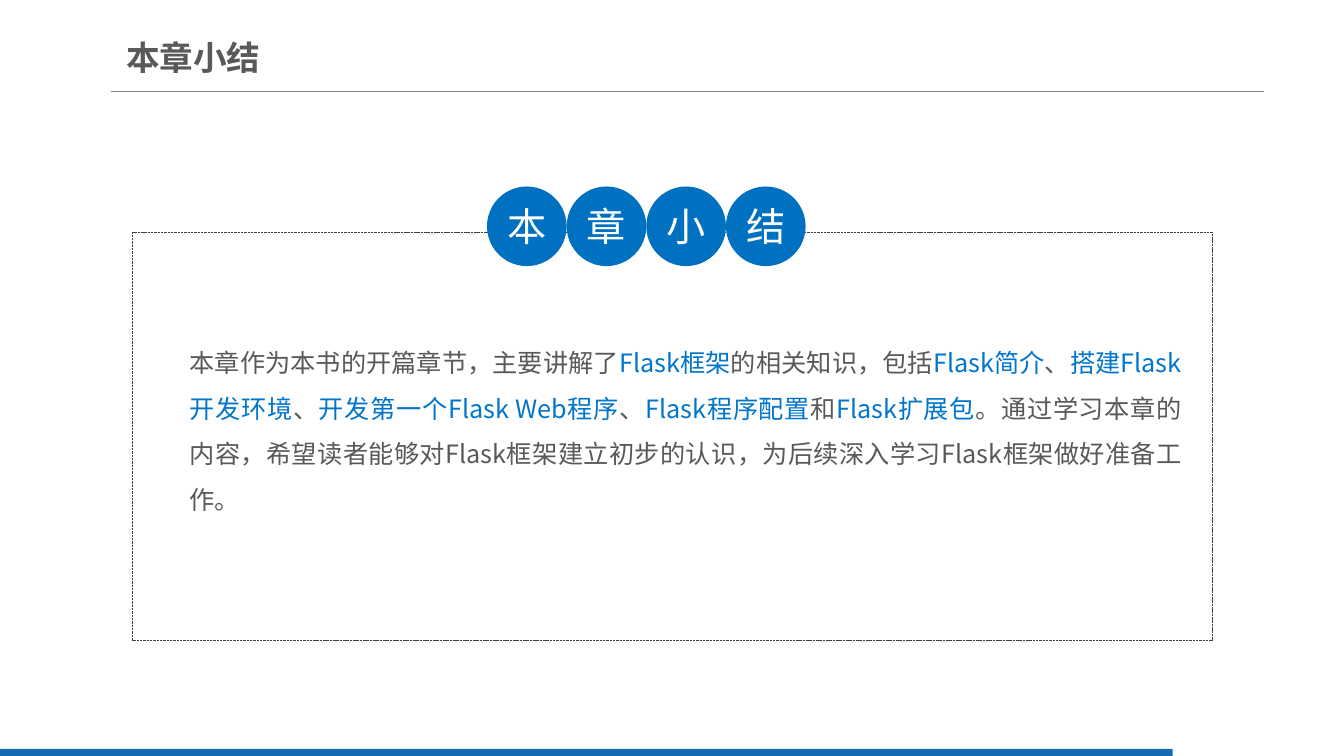
import pptx
import pptx.dml.color
import pptx.enum.dml
import pptx.enum.shapes
import pptx.enum.text
import pptx.oxml
import pptx.oxml.ns
import pptx.util

RGBColor = pptx.dml.color.RGBColor
Shape = pptx.enum.shapes.MSO_SHAPE
Align = pptx.enum.text.PP_ALIGN
Anchor = pptx.enum.text.MSO_ANCHOR

EMU_PER_PX = 9144  # 100 px to the inch
FONT = "Noto Sans CJK SC"
GRAY = RGBColor(0x59, 0x59, 0x59)
RULE_GRAY = RGBColor(0x80, 0x80, 0x80)
FRAME_GRAY = RGBColor(0x40, 0x40, 0x40)
BAR_BLUE = RGBColor(0x13, 0x69, 0xB2)
BADGE_BLUE = RGBColor(0x00, 0x70, 0xC0)
KEYWORD_BLUE = RGBColor(0x00, 0x75, 0xCC)
WHITE = RGBColor(0xFF, 0xFF, 0xFF)

HEADING = "本章小结"
# Plain text and highlighted keywords alternate.
SUMMARY = [
    "本章作为本书的开篇章节，主要讲解了", "Flask框架",
    "的相关知识，包括", "Flask简介",
    "、", "搭建Flask开发环境",
    "、", "开发第一个Flask Web程序",
    "、", "Flask程序配置",
    "和", "Flask扩展包",
    "。通过学习本章的内容，希望读者能够对Flask框架建立初步的认识，"
    "为后续深入学习Flask框架做好准备工作。",
]


def px(*lengths):
    return [pptx.util.Emu(length * EMU_PER_PX) for length in lengths]


def write_text(shape, spans, *, size, bold=False, align=Align.LEFT,
               anchor=Anchor.TOP, line_spacing=None, margins=(0, 0, 0, 0)):
    """Fill the shape with one paragraph of (text, colour) spans."""
    frame = shape.text_frame
    frame.word_wrap = True
    frame.auto_size = pptx.enum.text.MSO_AUTO_SIZE.NONE
    frame.vertical_anchor = anchor
    (frame.margin_left, frame.margin_top,
     frame.margin_right, frame.margin_bottom) = px(*margins)
    para = frame.paragraphs[0]
    para.alignment = align
    if line_spacing:
        para.line_spacing = line_spacing
    for text, color in spans:
        span = para.add_run()
        span.text = text
        span.font.size = pptx.util.Pt(size)
        span.font.bold = bold
        span.font.color.rgb = color
        span.font.name = FONT
        east_asian = pptx.oxml.parse_xml(
            f'<a:ea {pptx.oxml.ns.nsdecls("a")} typeface="{FONT}"/>')
        span.font._element.append(east_asian)


def add_filled(page, kind, box, color):
    shape = page.shapes.add_shape(kind, *px(*box))
    shape.shadow.inherit = False
    shape.fill.solid()
    shape.fill.fore_color.rgb = color
    shape.line.fill.background()
    return shape


def add_dashed_frame(page, box):
    frame = page.shapes.add_shape(Shape.ROUNDED_RECTANGLE, *px(*box))
    frame.adjustments[0] = 0
    frame.shadow.inherit = False
    frame.fill.background()
    frame.line.color.rgb = FRAME_GRAY
    frame.line.width = pptx.util.Pt(0.25)
    frame.line.dash_style = pptx.enum.dml.MSO_LINE.SQUARE_DOT


def add_rule(page, start, end):
    rule = page.shapes.add_connector(
        pptx.enum.shapes.MSO_CONNECTOR.STRAIGHT, *px(*start, *end))
    rule.line.color.rgb = RULE_GRAY
    rule.line.width = pptx.util.Pt(0.75)
    rule._element.spPr.append(pptx.oxml.parse_xml(
        f'<a:effectLst {pptx.oxml.ns.nsdecls("a")}/>'))


def place_title(page, box):
    title = page.shapes.title
    title.left, title.top, title.width, title.height = px(*box)
    write_text(title, [(HEADING, GRAY)], size=24, bold=True,
               anchor=Anchor.MIDDLE, margins=(0, 7, 0, 7))


def add_badges(page, left, top, diameter):
    """Place one circle per heading character, side by side."""
    for index, character in enumerate(HEADING):
        box = (left + index * diameter, top, diameter, diameter)
        badge = add_filled(page, Shape.OVAL, box, BADGE_BLUE)
        write_text(badge, [(character, WHITE)], size=28,
                   align=Align.CENTER, anchor=Anchor.MIDDLE)


def add_summary(page, box):
    spans = [(text, KEYWORD_BLUE if index % 2 else GRAY)
             for index, text in enumerate(SUMMARY)]
    write_text(page.shapes.add_textbox(*px(*box)), spans, size=18,
               align=Align.JUSTIFY, line_spacing=1.5)


def main():
    deck = pptx.Presentation()
    deck.slide_width, deck.slide_height = px(1333, 750)
    page = deck.slides.add_slide(deck.slide_layouts.get_by_name("Title Only"))
    add_rule(page, (110, 91), (1254, 91))
    add_filled(page, Shape.RECTANGLE, (0, 743, 1163, 7), BAR_BLUE)
    place_title(page, (125, 29, 620, 55))
    add_dashed_frame(page, (131, 230, 1071, 405))
    add_summary(page, (188, 330, 984, 182))
    add_badges(page, 483, 185, 79)
    deck.save("out.pptx")


if __name__ == "__main__":
    main()
